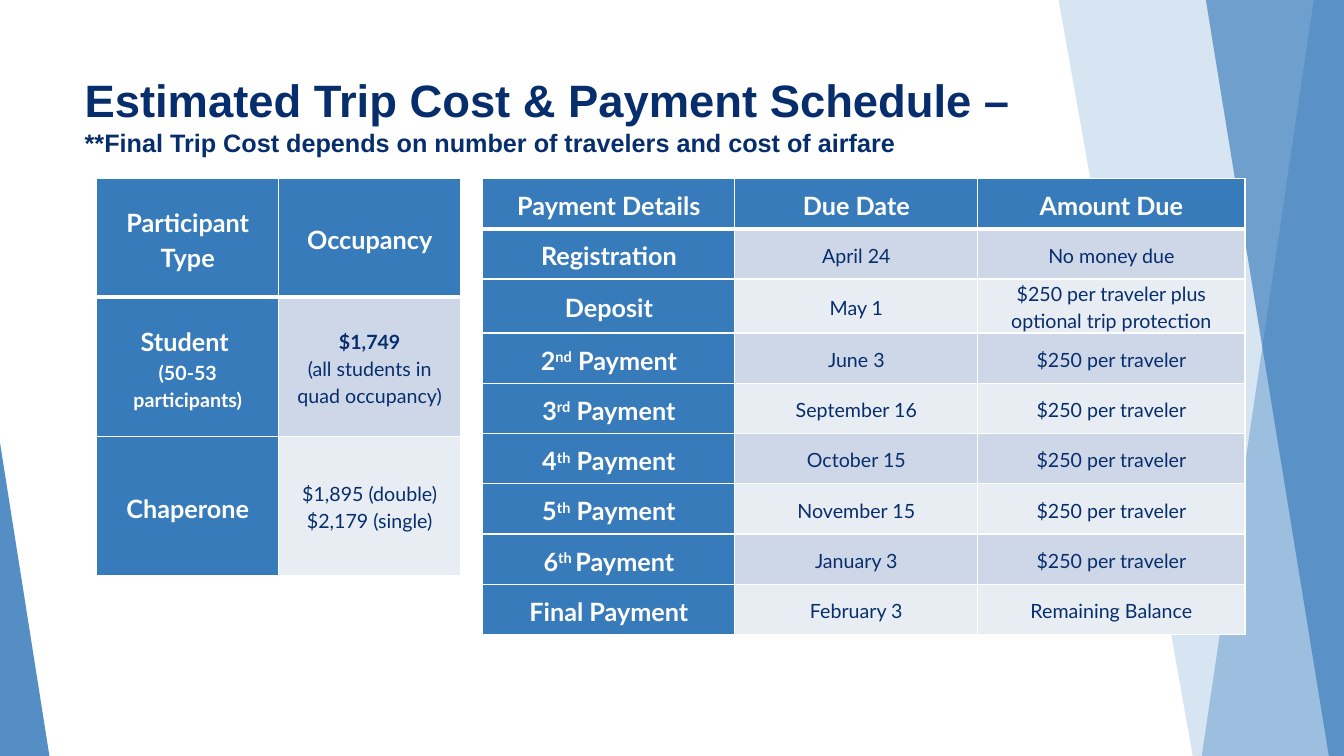
from lxml import etree
from pptx import Presentation
from pptx import util as u
from pptx.dml.color import RGBColor
from pptx.enum import shapes, text
from pptx.oxml import ns

# The slide is a grid of 100 columns by 100 rows
WIDTH, HEIGHT = u.Inches(13.33), u.Inches(7.5)
BLUE, SKY, NAVY, WHITE = "387BBB", "84B0DA", "072E6C", "FFFFFF"
BANDS = ["CED7E7", "E8ECF3"]
TABLE_TOP = 23.6

COSTS = [
    ["Participant Type", "Occupancy"],
    ["Student \n(50-53 participants)", "$1,749\v(all students in quad occupancy)"],
    ["Chaperone", "$1,895 (double)\v$2,179 (single)"],
]
INSTALMENT = "$250 per traveler"
# Text between carets is superscript
PAYMENTS = [
    ["Payment Details", "Due Date", "Amount Due"],
    ["Registration", "April 24", "No money due"],
    ["Deposit", "May 1", INSTALMENT + " plus optional trip protection"],
    ["2^nd^ Payment", "June 3", INSTALMENT],
    ["3^rd^ Payment", "September 16", INSTALMENT],
    ["4^th^ Payment", "October 15", INSTALMENT],
    ["5^th^ Payment", "November 15", INSTALMENT],
    ["6^th ^Payment", "January 3", INSTALMENT],
    ["Final Payment", "February 3", "Remaining Balance"],
]


def col(count):
    return u.Emu(round(WIDTH * count / 100))


def row(count):
    return u.Emu(round(HEIGHT * count / 100))


def paint(fill, colour, opacity=100):
    fill.solid()
    fill.fore_color.rgb = RGBColor.from_string(colour)
    if opacity < 100:
        tone = fill._xPr.find(".//" + ns.qn("a:srgbClr"))
        etree.SubElement(tone, ns.qn("a:alpha"), val=str(opacity * 1000))


def style(font, name, size, colour, bold):
    font.name, font.size, font.bold = name, u.Pt(size), bold
    font.color.rgb = RGBColor.from_string(colour)


def finish_shape(shape, colour, opacity):
    shape.shadow.inherit = False
    shape.line.fill.background()
    paint(shape.fill, colour, opacity)


def add_facet(page, points, colour, opacity):
    corners = [(col(x), row(y)) for x, y in points]
    builder = page.shapes.build_freeform(*corners[0])
    builder.add_line_segments(corners[1:], close=True)
    finish_shape(builder.convert_to_shape(), colour, opacity)


def add_decoration(page):
    add_facet(page, [(78.77, 0), (100, 0), (100, 100), (88.75, 100)], BLUE, 20)
    add_facet(page, [(97.75, 0), (100, 0), (100, 100), (89.42, 100)], SKY, 70)
    add_facet(page, [(89.72, 0), (100, 0), (100, 100), (98.87, 100)], BLUE, 65)
    corner = page.shapes.add_shape(shapes.MSO_SHAPE.ISOSCELES_TRIANGLE,
                                   0, row(58.53), col(3.68), row(41.47))
    corner.adjustments[0] = 0
    finish_shape(corner, BLUE, 85)


def set_title(page):
    title = page.shapes.title
    title.left, title.top, title.width, title.height = col(5.55), row(8.93), col(73.22), row(19.2)
    page.shapes._spTree.append(title._element)  # in front of the decoration
    frame = title.text_frame
    frame.word_wrap = True
    frame.auto_size = text.MSO_AUTO_SIZE.NONE
    frame.vertical_anchor = text.MSO_ANCHOR.TOP
    para = frame.paragraphs[0]
    para.text = ("Estimated Trip Cost & Payment Schedule –\v"
                 "**Final Trip Cost depends on number of travelers and cost of airfare")
    para.alignment = text.PP_ALIGN.LEFT
    for span, size in zip(para.runs, (32.4, 18)):
        style(span.font, "Arial", size, NAVY, True)


def set_borders(cell, top, bottom):
    for side, points in (("L", 1), ("R", 1), ("T", top), ("B", bottom)):
        line = etree.SubElement(cell._tc.get_or_add_tcPr(), ns.qn("a:ln" + side),
                                w=str(u.Pt(points)))
        solid = etree.SubElement(line, ns.qn("a:solidFill"))
        etree.SubElement(solid, ns.qn("a:srgbClr"), val=WHITE)


def write_cell(cell, words, size, colour, bold):
    cell.vertical_anchor = text.MSO_ANCHOR.MIDDLE
    cell.margin_left = cell.margin_right = u.Inches(0.07)
    cell.margin_top = cell.margin_bottom = 0
    cell.text_frame.text = words
    for para in cell.text_frame.paragraphs:
        para.alignment = text.PP_ALIGN.CENTER
        para.line_spacing = 1.15
        first, *others = para.text.split("^")
        if others:
            para.text = first
            for part in others:
                para.add_run().text = part
            para.runs[1].font._element.set("baseline", "30000")
        for span in para.runs:
            style(span.font, "Lato", size, colour, bold)


def add_grid(page, left, columns, rows, content):
    table = page.shapes.add_table(len(rows), len(columns), col(left), row(TABLE_TOP),
                                  col(sum(columns)), row(sum(rows))).table
    for column, width in zip(table.columns, columns):
        column.width = col(width)
    for band, height in zip(table.rows, rows):
        band.height = row(height)
    for r, line in enumerate(content):
        for c, words in enumerate(line):
            cell = table.cell(r, c)
            heading = r == 0 or c == 0
            set_borders(cell, 3 if r == 1 else 1, 3 if r == 0 else 1)
            paint(cell.fill, BLUE if heading else BANDS[(r - 1) % 2])
            write_cell(cell, words, 18 if heading else 14,
                       WHITE if heading else NAVY, heading)
    return table


def main():
    deck = Presentation()
    deck.slide_width, deck.slide_height = WIDTH, HEIGHT
    page = deck.slides.add_slide(deck.slide_layouts[5])
    add_decoration(page)
    set_title(page)

    # Trip cost, with a smaller group size and a bold price
    costs = add_grid(page, 7.2, [13.54] * 2, [15.73, 18.4, 18.4], COSTS)
    group_size = costs.cell(1, 0).text_frame.paragraphs[1]
    group_size.runs[0].font.size = u.Pt(14)
    price = costs.cell(1, 1).text_frame.paragraphs[0]
    price.runs[0].font.bold = True

    # Payment schedule
    add_grid(page, 35.93, [18.75, 18.08, 19.88], [6.65] * len(PAYMENTS), PAYMENTS)
    deck.save("out.pptx")


if __name__ == "__main__":
    main()
